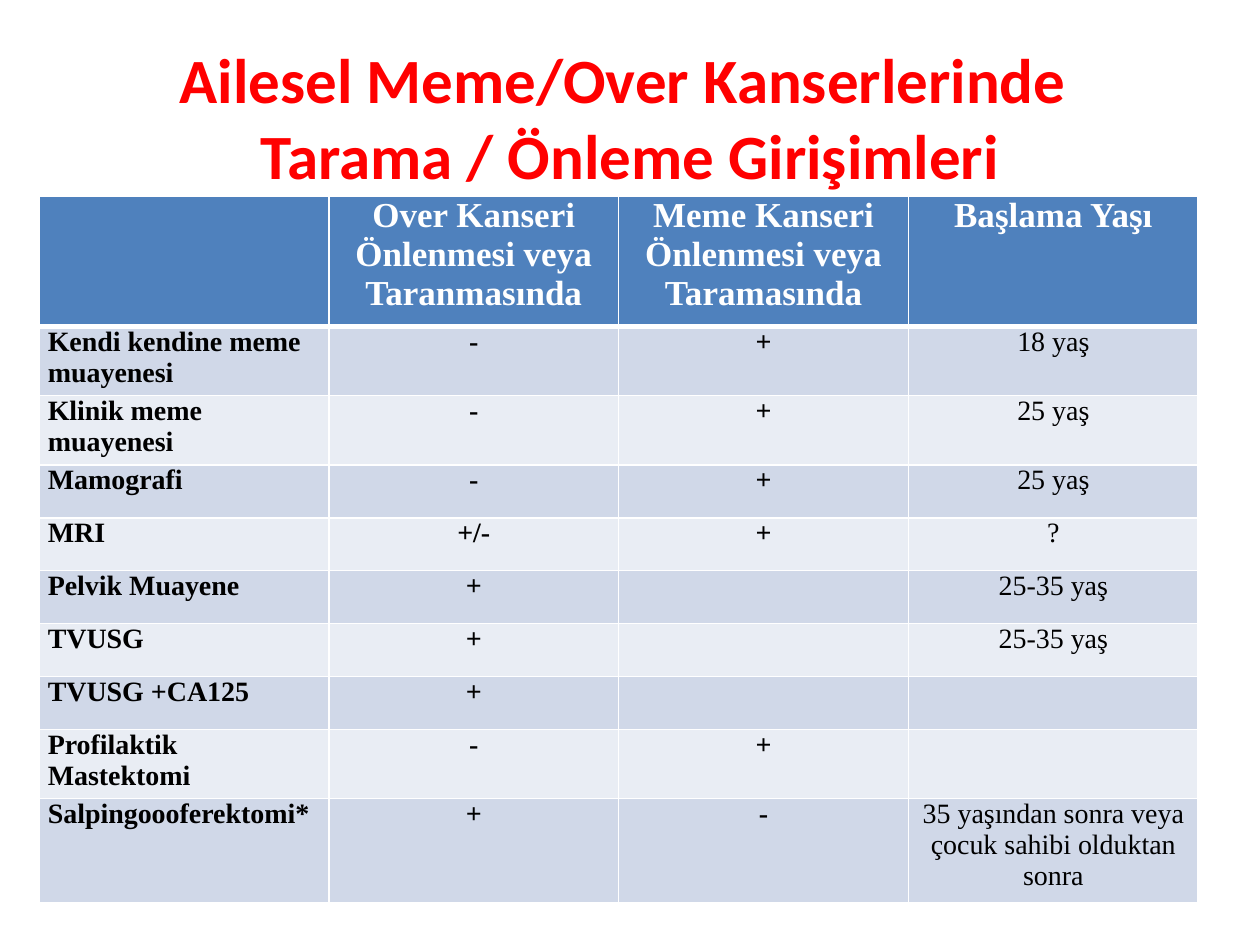
from lxml import etree
from pptx import Presentation
from pptx import util as u
from pptx.dml.color import RGBColor
from pptx.enum import text
from pptx.oxml import ns

COLORS = {
    "title": "FF0000",
    "header": "4F81BD",
    "odd": "D0D8E8",
    "even": "E9EDF4",
    "white": "FFFFFF",
    "black": "000000",
}
INSETS = {
    "margin_left": u.Inches(0.07),
    "margin_right": u.Inches(0.07),
    "margin_top": 0,
    "margin_bottom": 0,
}
SCREENING = [
    ("", "Over Kanseri Önlenmesi veya Taranmasında",
     "Meme Kanseri Önlenmesi veya Taramasında", "Başlama Yaşı"),
    ("Kendi kendine meme muayenesi", "-", "+", "18 yaş"),
    ("Klinik meme muayenesi", "-", "+", "25 yaş"),
    ("Mamografi", "-", "+", "25 yaş"),
    ("MRI", "+/-", "+", "?"),
    ("Pelvik Muayene", "+", "", "25-35 yaş"),
    ("TVUSG", "+", "", "25-35 yaş"),
    ("TVUSG +CA125", "+", "", ""),
    ("Profilaktik Mastektomi", "-", "+", ""),
    ("Salpingoooferektomi*", "+", "-",
     "35 yaşından sonra veya çocuk sahibi olduktan sonra"),
]
ROW_HEIGHTS = [1.03, 0.55, 0.55, 0.42, 0.42, 0.42, 0.42, 0.42, 0.55, 0.83]


def style_font(font, color, **values):
    for name, value in values.items():
        setattr(font, name, value)
    font.color.rgb = RGBColor.from_string(COLORS[color])


def add_borders(cell, widths):
    props = cell._tc.get_or_add_tcPr()
    for position, (side, points) in enumerate(widths.items()):
        line = etree.Element(ns.qn(f"a:{side}"), w=str(u.Pt(points)))
        fill = etree.SubElement(line, ns.qn("a:solidFill"))
        etree.SubElement(fill, ns.qn("a:srgbClr"), val=COLORS["white"])
        props.insert(position, line)


prs = Presentation()
prs.slide_width, prs.slide_height = u.Inches(10), u.Inches(7.5)
slide = prs.slides.add_slide(prs.slide_layouts[5])

heading = slide.shapes.title
heading_place = {"left": 0.5, "top": 0.3, "width": 9, "height": 1.25}
for name, value in heading_place.items():
    setattr(heading, name, u.Inches(value))
heading.text_frame.text = "Ailesel Meme/Over Kanserlerinde \vTarama / Önleme Girişimleri"
heading.text_frame.vertical_anchor = text.MSO_ANCHOR.MIDDLE
heading_line = heading.text_frame.paragraphs[0]
heading_line.alignment = text.PP_ALIGN.CENTER
for run in heading_line.runs:
    style_font(run.font, "title", name="Calibri", size=u.Pt(36), bold=True)

screening = slide.shapes.add_table(
    len(SCREENING), len(SCREENING[0]),
    u.Inches(0.31), u.Inches(1.56), u.Inches(9.19), u.Inches(sum(ROW_HEIGHTS)),
).table
for column in screening.columns:
    column.width = u.Inches(2.3)

for r, (height, entries) in enumerate(zip(ROW_HEIGHTS, SCREENING)):
    screening.rows[r].height = u.Inches(height)
    is_header = r == 0
    band = "header" if is_header else "odd" if r % 2 else "even"
    for c, entry in enumerate(entries):
        cell = screening.cell(r, c)
        cell.text = entry
        for name, value in INSETS.items():
            setattr(cell, name, value)
        cell.fill.solid()
        cell.fill.fore_color.rgb = RGBColor.from_string(COLORS[band])
        add_borders(cell, {"lnL": 1, "lnR": 1, "lnT": 3 if r == 1 else 1,
                           "lnB": 3 if is_header else 1})
        line = cell.text_frame.paragraphs[0]
        is_label = c == 0
        line.alignment = text.PP_ALIGN.LEFT if is_label else text.PP_ALIGN.CENTER
        style_font(line.runs[0].font if entry else line.font,
                   "white" if is_header else "black",
                   name="Times New Roman", size=u.Pt(20 if is_header else 16),
                   bold=is_header or c < 3)

prs.save("out.pptx")
